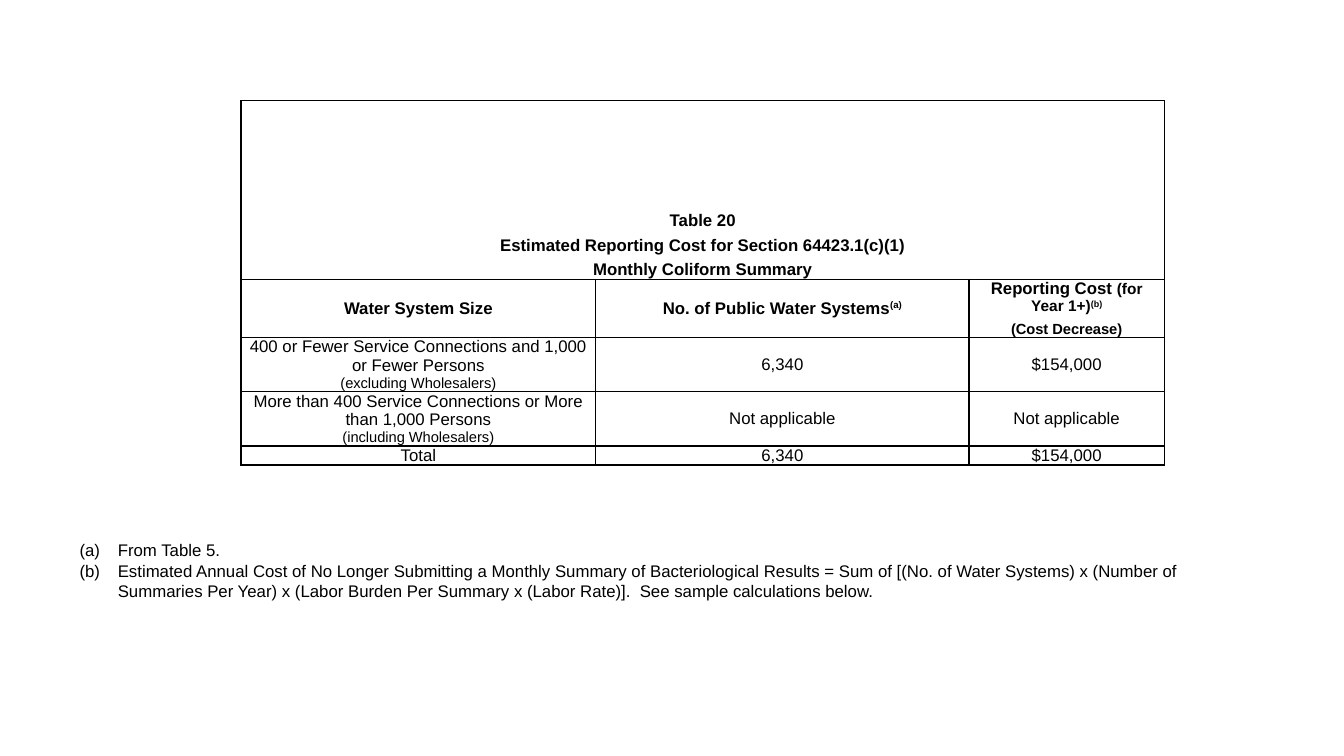
from dataclasses import dataclass

from lxml.etree import SubElement
from pptx import Presentation
from pptx.dml.color import RGBColor
from pptx.enum.text import MSO_ANCHOR, MSO_AUTO_SIZE, PP_ALIGN
from pptx.oxml.ns import qn
from pptx.util import Inches, Pt


@dataclass(frozen=True)
class Theme:
    font: str = "Arial"
    ink: str = "000000"
    body: float = 12
    medium: float = 11
    small: float = 10.5
    border: float = 1


THEME = Theme()
BOLD = {"bold": True}
SUPER = {"bold": True, "baseline": 30}
BREAK = "\n"

# A cell is a list of paragraphs; a paragraph is a list of (text, format) runs.
TITLE = [[(line, BOLD)] for line in (
    "Table 20",
    "Estimated Reporting Cost for Section 64423.1(c)(1)",
    "Monthly Coliform Summary",
)]
HEADINGS = [
    [[("Water System Size", BOLD)]],
    [[("No. of Public Water Systems", BOLD), ("(a)", SUPER)]],
    [[("Reporting Cost ", BOLD),
      ("(for Year 1+)", BOLD | {"size": THEME.medium}),
      ("(b)", SUPER | {"size": THEME.medium})],
     [("(Cost Decrease)", BOLD | {"size": THEME.small})]],
]
SYSTEMS = [
    ("400 or Fewer Service Connections and 1,000 or Fewer Persons",
     "(excluding Wholesalers)", "6,340", "$154,000"),
    ("More than 400 Service Connections or More than 1,000 Persons",
     "(including Wholesalers)", "Not applicable", "Not applicable"),
    ("Total", "", "6,340", "$154,000"),
]
NOTES = [
    "From Table 5.",
    "Estimated Annual Cost of No Longer Submitting a Monthly Summary of "
    "Bacteriological Results = Sum of [(No. of Water Systems) x (Number of "
    "Summaries Per Year) x (Labor Burden Per Summary x (Labor Rate)].  "
    "See sample calculations below.",
]


def system_row(size, remark, count, cost):
    label = [(size, {})]
    if remark:
        label += [(BREAK, {}), (remark, {"size": THEME.small})]
    return [[label], [[(count, {})]], [[(cost, {})]]]


class SlideBuilder:
    def __init__(self, slide, theme):
        self.slide = slide
        self.theme = theme

    def runs(self, p, parts):
        for text, fmt in parts:
            if text == BREAK:
                p.add_line_break()
                SubElement(p._p[-1], qn("a:rPr"), sz=str(int(self.theme.body * 100)))
                continue
            r = p.add_run()
            r.text = text
            values = {"name": self.theme.font, "size": self.theme.body, "bold": False} | fmt
            baseline = values.pop("baseline", 0)
            values["size"] = Pt(values["size"])
            for name, value in values.items():
                setattr(r.font, name, value)
            r.font.color.rgb = RGBColor.from_string(self.theme.ink)
            if baseline:
                r._r.get_or_add_rPr().set("baseline", str(baseline * 1000))

    def paragraphs(self, tf, content, **layout):
        for i, parts in enumerate(content):
            p = tf.paragraphs[0] if i == 0 else tf.add_paragraph()
            for name, value in layout.items():
                setattr(p, name, value)
            self.runs(p, parts)

    def borders(self, cell):
        """Draw all four edges; they must precede the fill in the cell XML."""
        tcPr = cell._tc.get_or_add_tcPr()
        for edge in ("lnL", "lnR", "lnT", "lnB"):
            ln = SubElement(tcPr, qn(f"a:{edge}"), w=str(Pt(self.theme.border)))
            fill = SubElement(ln, qn("a:solidFill"))
            SubElement(fill, qn("a:srgbClr"), val=self.theme.ink)

    def cell(self, cell, content, anchor=MSO_ANCHOR.MIDDLE):
        values = {
            "margin_left": Inches(0.07), "margin_right": Inches(0.07),
            "margin_top": 0, "margin_bottom": 0, "vertical_anchor": anchor,
        }
        for name, value in values.items():
            setattr(cell, name, value)
        self.paragraphs(cell.text_frame, content, alignment=PP_ALIGN.CENTER,
                        space_before=Pt(2), space_after=Pt(2))

    def table(self, left, top, widths, heights, title, rows):
        """Add a grid whose first row is one merged title cell."""
        frame = self.slide.shapes.add_table(
            len(heights), len(widths), Inches(left), Inches(top),
            Inches(sum(widths)), Inches(sum(heights)))
        table = frame.table
        table.first_row = table.horz_banding = False
        for column, width in zip(table.columns, widths):
            column.width = Inches(width)
        for row, height in zip(table.rows, heights):
            row.height = Inches(height)
        for cell in table.iter_cells():
            self.borders(cell)
            cell.fill.background()
        table.cell(0, 0).merge(table.cell(0, len(widths) - 1))
        self.cell(table.cell(0, 0), title, MSO_ANCHOR.BOTTOM)
        for i, row in enumerate(rows, start=1):
            for j, content in enumerate(row):
                self.cell(table.cell(i, j), content)

    def lettered_notes(self, left, top, width, height, notes):
        box = self.slide.shapes.add_textbox(
            Inches(left), Inches(top), Inches(width), Inches(height))
        tf = box.text_frame
        tf.word_wrap = True
        tf.auto_size = MSO_AUTO_SIZE.SHAPE_TO_FIT_TEXT
        self.paragraphs(tf, [[(note, {})] for note in notes])
        tf.paragraphs[0].space_before = Pt(2)
        tf.paragraphs[-1].space_after = Pt(24)
        indent = Inches(0.38)
        for p in tf.paragraphs:
            pPr = p._p.get_or_add_pPr()
            pPr.set("marL", str(indent))
            pPr.set("indent", str(-indent))
            SubElement(pPr, qn("a:buFont"), typeface=self.theme.font)
            SubElement(pPr, qn("a:buAutoNum"), type="alphaLcParenBoth")


def main():
    prs = Presentation()
    prs.slide_width, prs.slide_height = Inches(13.33), Inches(7.5)
    s = SlideBuilder(prs.slides.add_slide(prs.slide_layouts[6]), THEME)
    s.table(2.39, 1, widths=[3.52, 3.7, 1.94], heights=[1.77, 0.57, 0.54, 0.54, 0.19],
            title=TITLE, rows=[HEADINGS] + [system_row(*system) for system in SYSTEMS])
    s.lettered_notes(0.69, 5.31, 11.39, 0.71, NOTES)
    prs.save("out.pptx")


if __name__ == "__main__":
    main()
